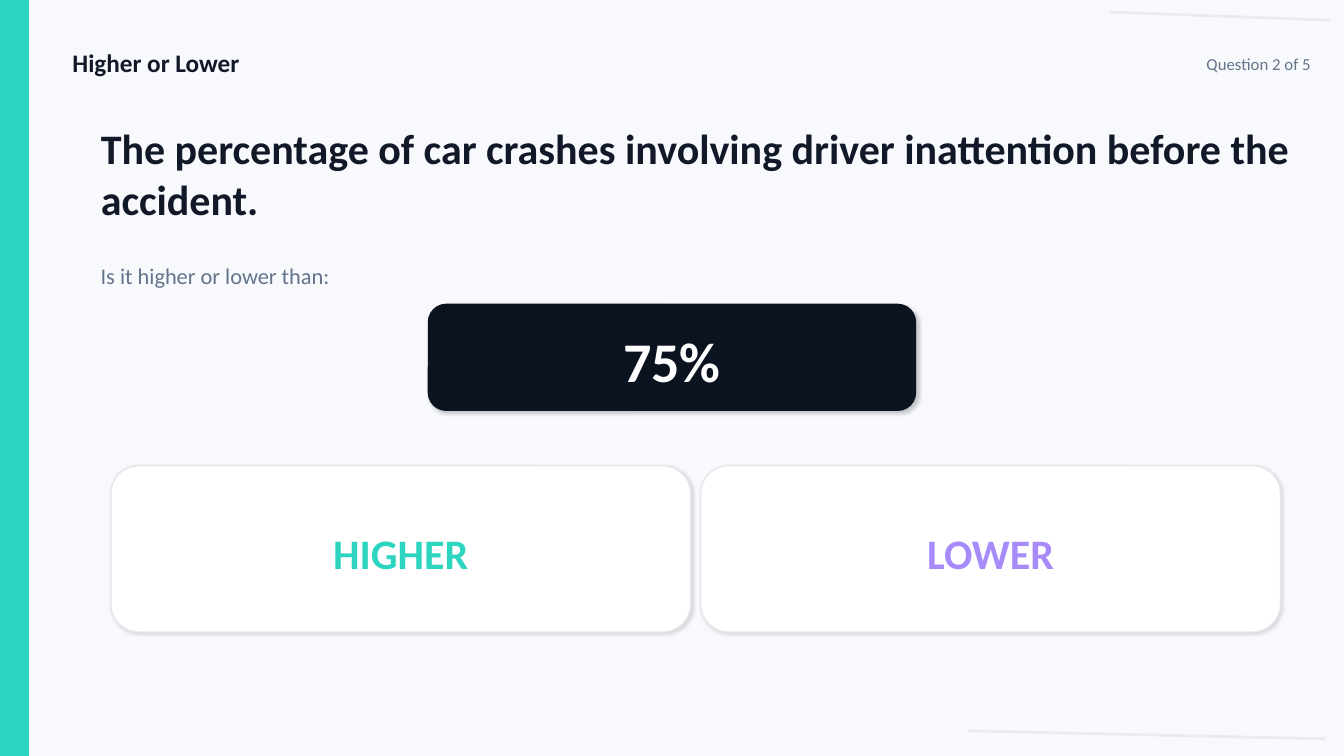
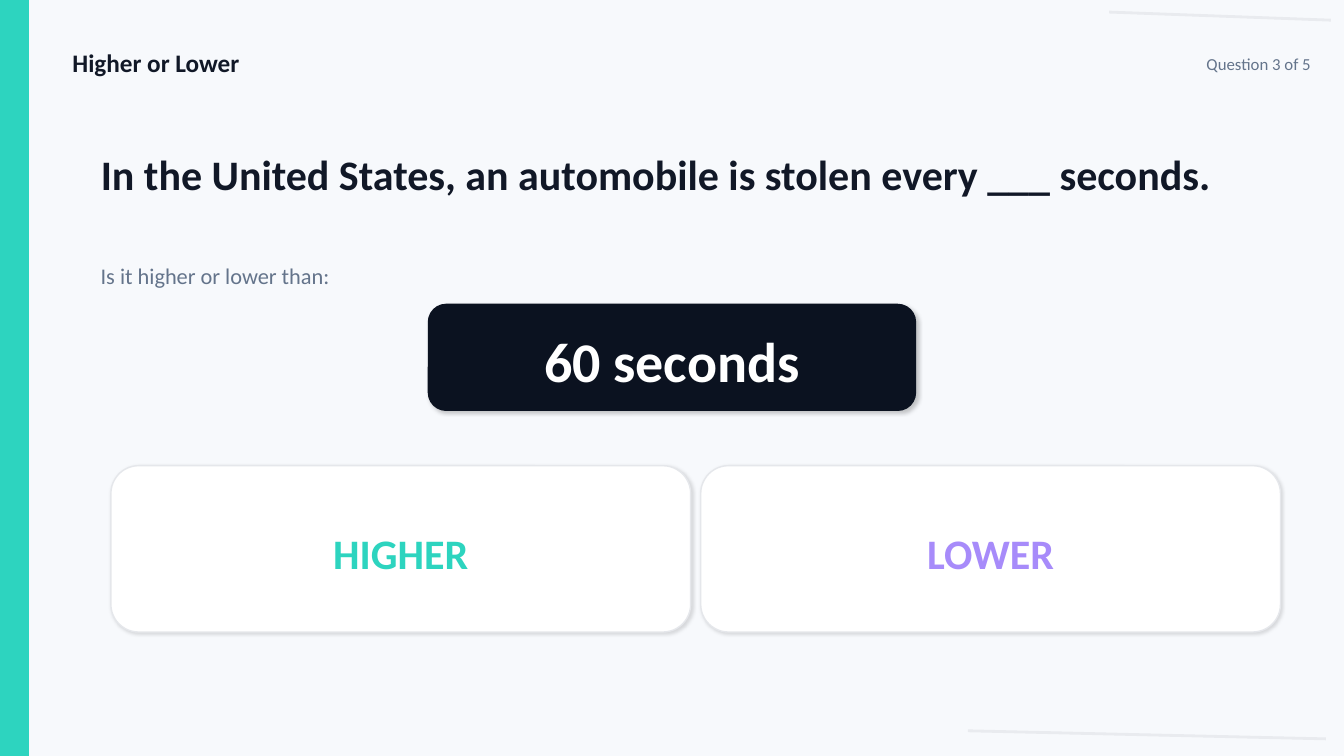
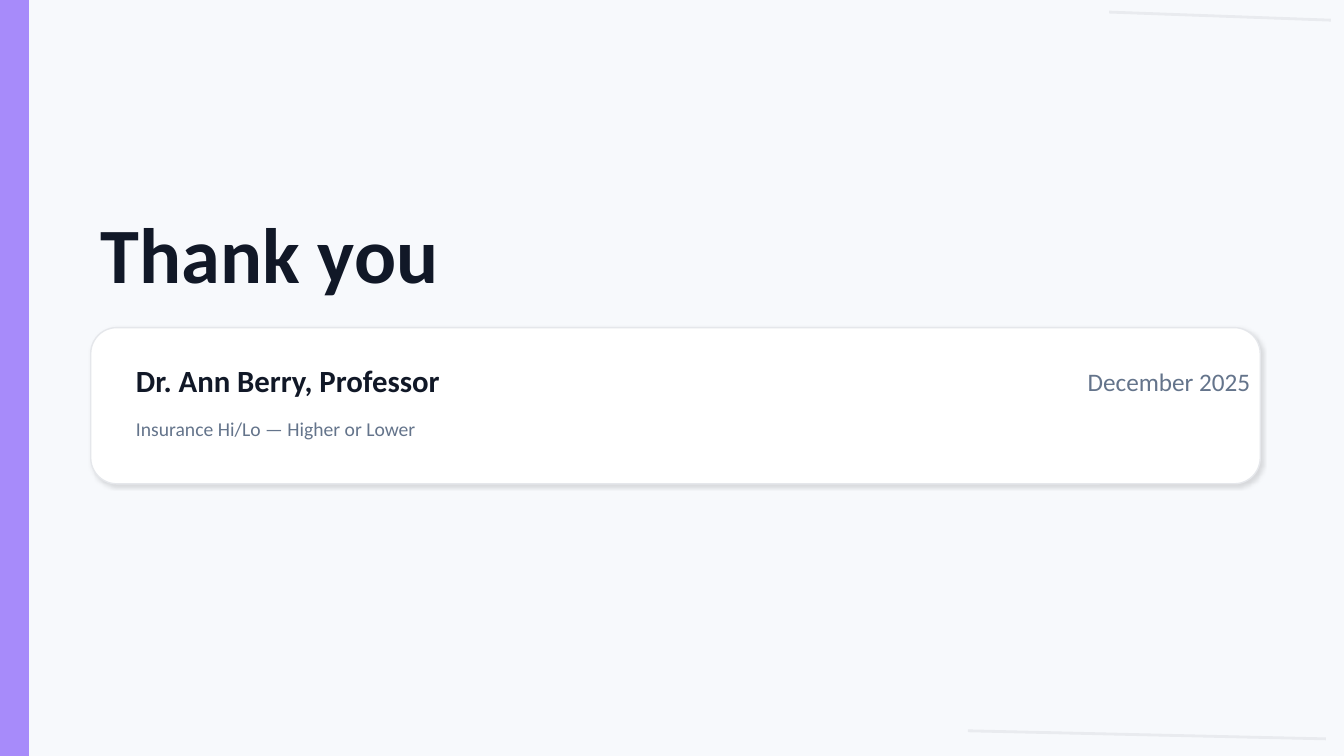
"""Builds three slides of a higher-or-lower quiz."""
from lxml.etree import SubElement
from pptx import Presentation
from pptx.dml.color import RGBColor
from pptx.enum.shapes import MSO_CONNECTOR, MSO_SHAPE
from pptx.enum.text import MSO_ANCHOR, MSO_AUTO_SIZE, PP_ALIGN
from pptx.oxml.ns import qn
from pptx.util import Inches, Pt

FONT = "Calibri"
PAGE, WHITE, EDGE = "F7F9FC", "FFFFFF", "E5E7EB"
INK, NAVY, GREY = "111827", "0B1220", "64748B"
TEAL, VIOLET = "2DD4BF", "A78BFA"
LEFT, CENTER, RIGHT = PP_ALIGN.LEFT, PP_ALIGN.CENTER, PP_ALIGN.RIGHT

TOPIC = "Higher or Lower"
PROMPT = "Is it higher or lower than:"
TOTAL = 5
QUIZ = [
    (2, "The percentage of car crashes involving driver inattention before the accident.", "75%"),
    (3, "In the United States, an automobile is stolen every ___ seconds.", "60 seconds"),
]
PICKS = [("HIGHER", TEAL), ("LOWER", VIOLET)]
STROKES = [(9.6, 7.25, 13.15, 7.33), (11, 0.12, 13.2, 0.2)]
CLOSING = "Thank you"
CREDITS = [
    ("Dr. Ann Berry, Professor", (1.25, 3.55, 7.2, 0.45), 22, INK, True, LEFT),
    ("December 2025", (8.8, 3.58, 3.7, 0.4), 18, GREY, False, RIGHT),
    ("Insurance Hi/Lo — Higher or Lower", (1.25, 4.05, 11, 0.4), 14, GREY, False, LEFT),
]


def rgb(code):
    """Turn a hex string into a colour."""
    return RGBColor.from_string(code)


def inches(box):
    """Turn plain numbers into lengths."""
    return [Inches(n) for n in box]


def write(shape, text, size, color, bold=False, align=LEFT):
    """Put one styled paragraph, centred vertically, in a shape."""
    frame = shape.text_frame
    frame.text = text
    frame.word_wrap = True
    frame.auto_size = MSO_AUTO_SIZE.NONE
    frame.vertical_anchor = MSO_ANCHOR.MIDDLE
    para = frame.paragraphs[0]
    para.alignment = align
    font = para.font
    font.name, font.size, font.bold = FONT, Pt(size), bold
    font.color.rgb = rgb(color)


def label(slide, text, box, *style):
    """Add a text box."""
    write(slide.shapes.add_textbox(*inches(box)), text, *style)


def head(slide, text, box, size):
    """Move and fill the title placeholder."""
    title = slide.shapes.title
    title.left, title.top, title.width, title.height = inches(box)
    write(title, text, size, INK, True)


def block(slide, kind, box, fill, edge):
    """Add a filled shape without a shadow."""
    shape = slide.shapes.add_shape(kind, *inches(box))
    shape.shadow.inherit = False
    shape.fill.solid()
    shape.fill.fore_color.rgb = rgb(fill)
    shape.line.color.rgb = rgb(edge)
    shape.line.width = Pt(1)
    return shape


def card(slide, box, fill, edge, alpha, blur, dist):
    """Add a rounded card with a soft shadow."""
    shape = block(slide, MSO_SHAPE.ROUNDED_RECTANGLE, box, fill, edge)
    effect = shape._element.spPr.find(qn("a:effectLst"))
    shade = SubElement(effect, qn("a:outerShdw"), blurRad=str(Pt(blur)),
                       dist=str(Pt(dist)), dir=str(45 * 60000),
                       algn="tl", rotWithShape="0")
    tint = SubElement(shade, qn("a:srgbClr"), val="000000")
    SubElement(tint, qn("a:alpha"), val=str(alpha * 1000))
    return shape


def start(deck, accent):
    """Add a slide with its side band and faint strokes."""
    slide = deck.slides.add_slide(deck.slide_layouts[5])
    block(slide, MSO_SHAPE.RECTANGLE, (0, 0, 0.28, 7.5), accent, accent)
    for ends in STROKES:
        line = slide.shapes.add_connector(MSO_CONNECTOR.STRAIGHT, *inches(ends))
        line.line.color.rgb = rgb(NAVY)
        line.line.width = Pt(2)
        props = line._element.spPr
        SubElement(next(props.iter(qn("a:srgbClr"))), qn("a:alpha"), val="6000")
        SubElement(props, qn("a:effectLst"))
    return slide


def ask(deck, number, question, value):
    """Add a question slide."""
    slide = start(deck, TEAL)
    label(slide, TOPIC, (0.62, 0.42, 8, 0.4), 18, INK, True)
    label(slide, f"Question {number} of {TOTAL}", (9, 0.46, 4.1, 0.35), 12, GREY, False, RIGHT)
    head(slide, question, (0.9, 1.12, 12.1, 1.2), 30)
    label(slide, PROMPT, (0.9, 2.56, 12.1, 0.35), 16, GREY)
    panel = card(slide, (4.25, 3.02, 4.83, 1.05), NAVY, NAVY, 22, 3, 1.8)
    panel.text_frame.margin_top = Inches(0.1)
    write(panel, value, 40, WHITE, True, CENTER)
    wide, gap = 5.75, 0.1
    for i, (pick, color) in enumerate(PICKS):
        box = (1.1 + i * (wide + gap), 4.62, wide, 1.65)
        choice = card(slide, box, WHITE, EDGE, 12, 2.5, 1.2)
        choice.text_frame.margin_top = Inches(0.12)
        write(choice, pick, 30, color, True, CENTER)


def close(deck):
    """Add the closing slide."""
    slide = start(deck, VIOLET)
    head(slide, CLOSING, (0.9, 2.1, 12, 0.8), 56)
    card(slide, (0.9, 3.25, 11.6, 1.55), WHITE, EDGE, 12, 3, 1.5)
    for credit in CREDITS:
        label(slide, *credit)


def main():
    """Build and save the deck."""
    deck = Presentation()
    deck.slide_width, deck.slide_height = Inches(13.33), Inches(7.5)
    back = deck.slide_master.background.fill
    back.solid()
    back.fore_color.rgb = rgb(PAGE)
    for item in QUIZ:
        ask(deck, *item)
    close(deck)
    deck.save("out.pptx")


if __name__ == "__main__":
    main()
